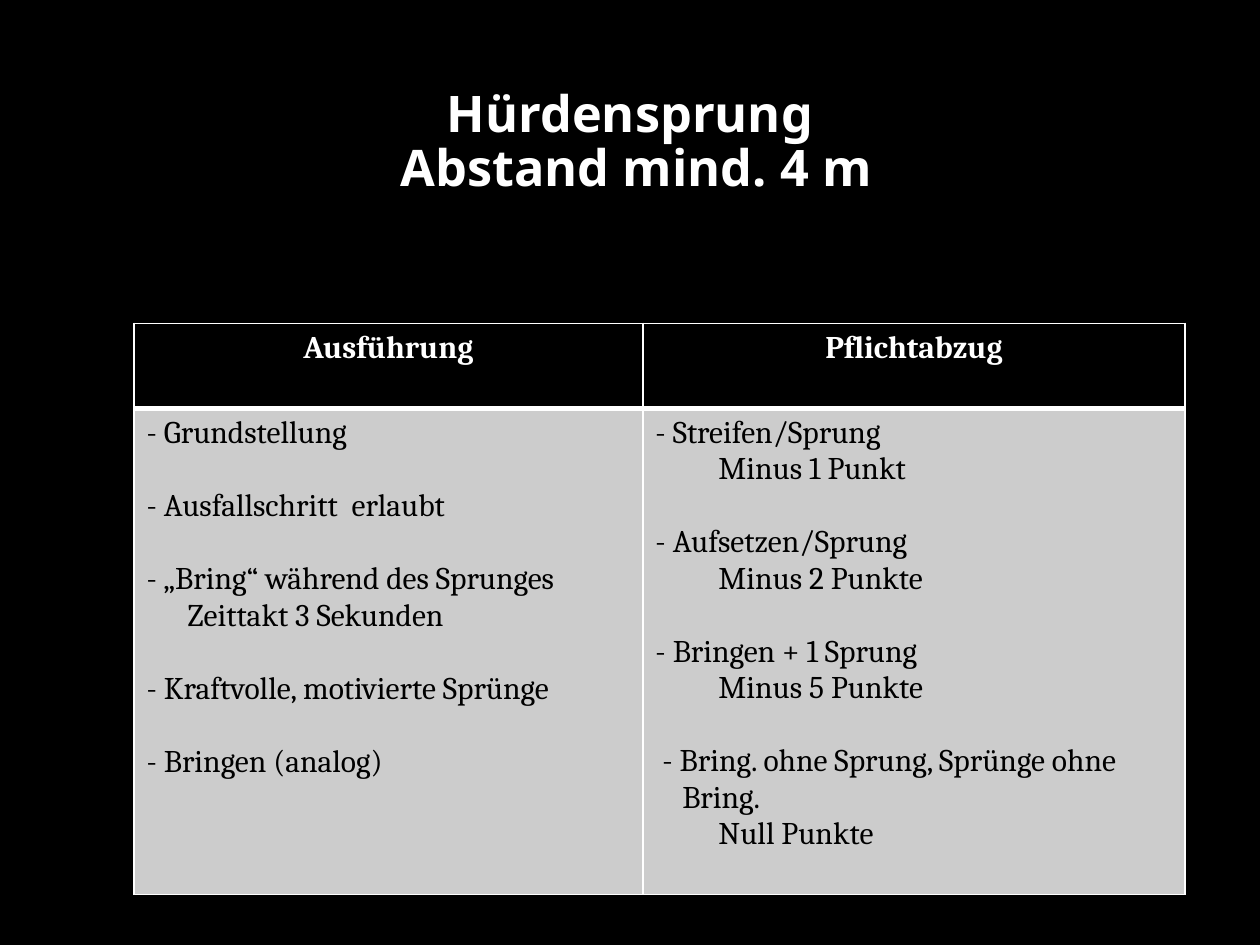
from lxml import etree
from pptx import Presentation
from pptx.dml.color import RGBColor
from pptx.enum.text import MSO_ANCHOR, PP_ALIGN
from pptx.oxml.ns import qn
from pptx.util import Cm, Pt

BLACK = RGBColor(0x00, 0x00, 0x00)
WHITE = RGBColor(0xFF, 0xFF, 0xFF)
GRAY = RGBColor(0xCC, 0xCC, 0xCC)
LEFT, CENTER = PP_ALIGN.LEFT, PP_ALIGN.CENTER
TOP = MSO_ANCHOR.TOP

TITLE = [("Hürdensprung", 0, 0), ("Abstand mind. 4 m", 0.25, 0)]
HEADERS = ["Ausführung", "Pflichtabzug"]
GAP = 21
STEP = 1.27
EXECUTION = [
    ("- Grundstellung", 0, 0),
    ("- Ausfallschritt  erlaubt", 0, GAP),
    ("- „Bring“ während des Sprunges", 0, GAP),
    ("Zeittakt 3 Sekunden", 0.83, 0),
    ("- Kraftvolle, motivierte Sprünge", 0, GAP),
    ("- Bringen (analog)", 0, GAP),
]
DEDUCTIONS = [
    ("- Streifen/Sprung", 0, 0),
    ("Minus 1 Punkt", STEP, 0),
    ("- Aufsetzen/Sprung", 0, GAP),
    ("Minus 2 Punkte", STEP, 0),
    ("- Bringen + 1 Sprung", 0, GAP),
    ("Minus 5 Punkte", STEP, 0),
    ("- Bring. ohne Sprung, Sprünge ohne", 0.14, GAP),
    ("Bring.", 0.54, 0),
    ("Null Punkte", STEP, 0),
]


def add_text(p, text, font="Cambria", size=18, color=BLACK, bold=False,
             align=LEFT, indent=0, before=0, spacing=1.0):
    p.alignment = align
    p.space_before = Pt(before)
    p.line_spacing = spacing
    if indent:
        pPr = p._p.get_or_add_pPr()
        pPr.set("marL", str(Cm(indent)))
        pPr.set("indent", "0")
    r = p.add_run()
    r.text = text
    r.font.name = font
    r.font.size = Pt(size)
    r.font.bold = bold
    r.font.color.rgb = color


class SlideBuilder:
    """Holds the style and the current slide."""

    def __init__(self, prs, background=BLACK):
        self.s = prs.slides.add_slide(prs.slide_layouts[6])
        self.s.background.fill.solid()
        self.s.background.fill.fore_color.rgb = background

    def lines(self, tf, lines, **style):
        for i, (text, indent, before) in enumerate(lines):
            p = tf.add_paragraph() if i else tf.paragraphs[0]
            add_text(p, text, indent=indent, before=before, **style)

    def title(self, lines, x, y, w, h):
        tf = self.s.shapes.add_textbox(Cm(x), Cm(y), Cm(w), Cm(h)).text_frame
        tf.word_wrap = True
        tf.vertical_anchor = TOP
        tf.margin_top, tf.margin_bottom = Cm(1.03), 0
        self.lines(tf, lines, font="Noto Sans", size=28.8, color=WHITE,
                   bold=True, align=CENTER, spacing=0.9)

    def borders(self, cell, **widths):
        tcPr = cell._tc.get_or_add_tcPr()
        for i, side in enumerate("LRTB"):
            ln = etree.Element(qn(f"a:ln{side}"), w=str(Pt(widths.get(side, 1))))
            fill = etree.SubElement(ln, qn("a:solidFill"))
            etree.SubElement(fill, qn("a:srgbClr"), val=str(WHITE))
            tcPr.insert(i, ln)

    def cell(self, cell, lines, fill, widths, **style):
        cell.fill.solid()
        cell.fill.fore_color.rgb = fill
        self.lines(cell.text_frame, lines, **style)
        self.borders(cell, **widths)

    def table(self, headers, bodies, x, y, cols, rows):
        t = self.s.shapes.add_table(len(rows), len(cols), Cm(x), Cm(y),
                                    Cm(sum(cols)), Cm(sum(rows))).table
        for row, height in zip(t.rows, rows):
            row.height = Cm(height)
        for i, (header, body, width) in enumerate(zip(headers, bodies, cols)):
            t.columns[i].width = Cm(width)
            self.cell(t.cell(0, i), [(header, 0, 0)], BLACK, {"B": 3},
                      color=WHITE, bold=True, align=CENTER)
            self.cell(t.cell(1, i), body, GRAY, {"T": 3})


def main():
    prs = Presentation()
    prs.slide_width, prs.slide_height = Cm(25.4), Cm(19.05)
    slide = SlideBuilder(prs)
    slide.title(TITLE, 1.27, 0.76, 22.86, 3.18)
    slide.table(HEADERS, [EXECUTION, DEDUCTIONS], 2.7, 6.52,
                cols=[10.26, 10.93], rows=[1.72, 9.79])
    prs.save("out.pptx")


if __name__ == "__main__":
    main()
